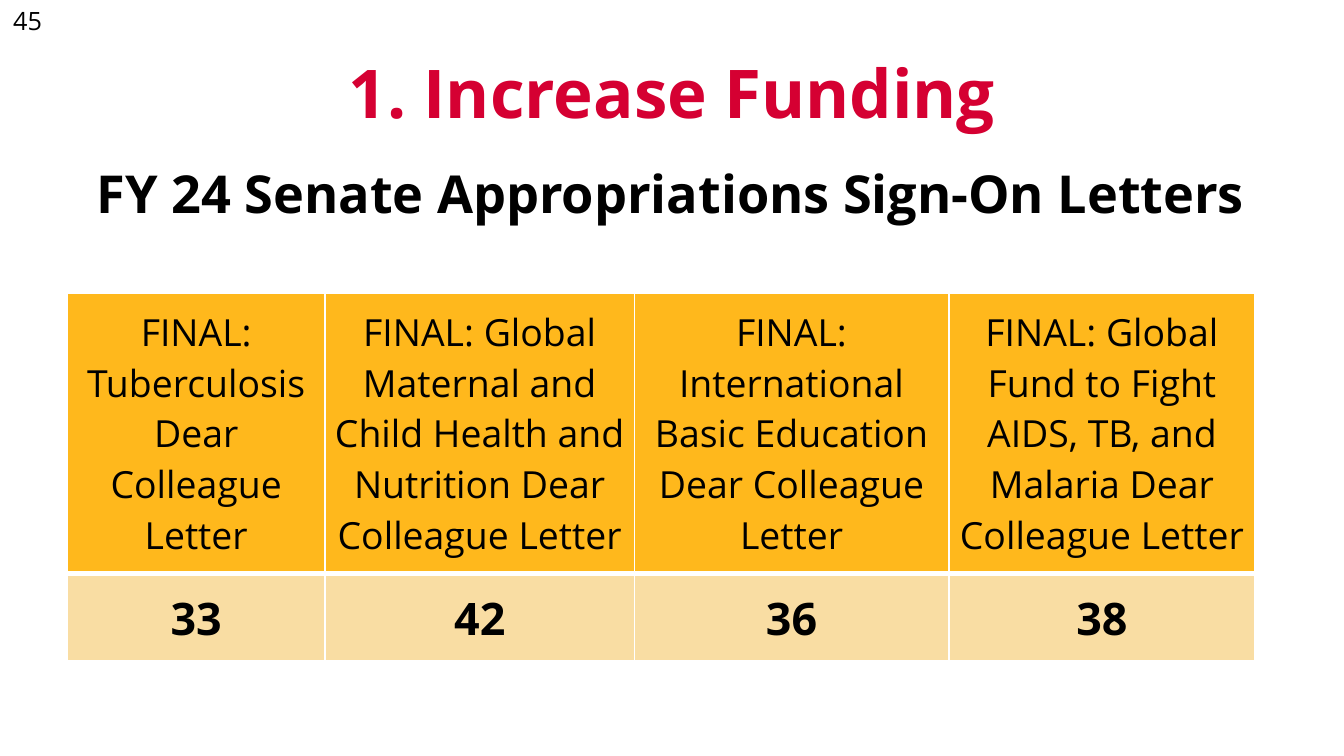
from lxml.etree import SubElement
from pptx import Presentation
from pptx.dml.color import RGBColor
from pptx.enum.text import MSO_ANCHOR, MSO_AUTO_SIZE, PP_ALIGN
from pptx.oxml import parse_xml
from pptx.oxml.ns import nsdecls, qn
from pptx.util import Inches, Pt

SLIDE_WIDTH = 10
SLIDE_HEIGHT = SLIDE_WIDTH * 9 / 16
FONT = "Open Sans"
COLORS = {
    "heading": "D50032",
    "ink": "000000",
    "header": "FFB81C",
    "count": "F9DDA3",
    "rule": "FFFFFF",
}
LETTERS = [
    ("FINAL: Tuberculosis Dear Colleague Letter", "33", 1.92),
    ("FINAL: Global Maternal and Child Health and Nutrition Dear Colleague Letter", "42", 2.3),
    ("FINAL: International Basic Education Dear Colleague Letter", "36", 2.34),
    ("FINAL: Global Fund to Fight AIDS, TB, and Malaria Dear Colleague Letter", "38", 2.28),
]


def color(name):
    return RGBColor.from_string(COLORS[name])


def place(shape, box):
    shape.left, shape.top, shape.width, shape.height = map(Inches, box)


def write(frame, text, size, ink="ink", bold=False, align=PP_ALIGN.LEFT):
    paragraph = frame.paragraphs[0]
    paragraph.text = text
    paragraph.alignment = align
    paragraph.font.name = FONT
    paragraph.font.size = Pt(size)
    paragraph.font.bold = bold
    paragraph.font.color.rgb = color(ink)
    return paragraph


def add_page_number(slide, box):
    number = slide.shapes.add_textbox(*map(Inches, box))
    number.text_frame.word_wrap = True
    write(number.text_frame, "45", 13.5)


def fill_title(slide, box):
    title = slide.shapes.title
    place(title, box)
    title.text_frame.auto_size = MSO_AUTO_SIZE.NONE
    title.text_frame.vertical_anchor = MSO_ANCHOR.MIDDLE
    write(title.text_frame, "1. Increase Funding", 36, "heading", True, PP_ALIGN.CENTER)


def fill_subtitle(slide, box):
    subtitle = slide.placeholders[1]
    place(subtitle, box)
    frame = subtitle.text_frame
    frame.auto_size = MSO_AUTO_SIZE.NONE
    properties = frame.paragraphs[0]._p.get_or_add_pPr()
    properties.set("marL", str(Inches(0.12)))
    properties.set("indent", "0")
    SubElement(properties, qn("a:buNone"))
    heading = write(frame, "FY 24 Senate Appropriations Sign-On Letters", 28, bold=True)
    heading.space_before = Pt(0)


def rule_cell(cell, top, bottom):
    properties = cell._tc.get_or_add_tcPr()
    widths = {"lnL": 1, "lnR": 1, "lnT": top, "lnB": bottom}
    for position, (side, width) in enumerate(widths.items()):
        properties.insert(position, parse_xml(
            f'<a:{side} {nsdecls("a")} w="{Pt(width)}"><a:solidFill>'
            f'<a:srgbClr val="{COLORS["rule"]}"/></a:solidFill></a:{side}>'
        ))


def fill_cell(cell, text, size, fill, bold, top, bottom):
    cell.margin_left = cell.margin_right = Inches(0.03)
    cell.margin_top = cell.margin_bottom = Inches(0.1)
    cell.vertical_anchor = MSO_ANCHOR.BOTTOM
    write(cell.text_frame, text, size, bold=bold, align=PP_ALIGN.CENTER)
    cell.fill.solid()
    cell.fill.fore_color.rgb = color(fill)
    rule_cell(cell, top, bottom)


def add_letters_table(slide, box):
    letters = slide.shapes.add_table(2, len(LETTERS), *map(Inches, box)).table
    header_height = 2.09
    letters.rows[0].height = Inches(header_height)
    letters.rows[1].height = Inches(box[3] - header_height)
    share = box[2] / sum(width for _, _, width in LETTERS)
    for column, (letter, signers, width) in enumerate(LETTERS):
        letters.columns[column].width = Inches(width * share)
        fill_cell(letters.cell(0, column), letter, 20, "header", False, 1, 3)
        fill_cell(letters.cell(1, column), signers, 24, "count", True, 3, 1)


def main():
    deck = Presentation()
    deck.slide_width = Inches(SLIDE_WIDTH)
    deck.slide_height = Inches(SLIDE_HEIGHT)
    slide = deck.slides.add_slide(deck.slide_layouts[1])
    margin = SLIDE_WIDTH * 0.05
    title_width = 6.54
    add_page_number(slide, (0, -0.01, margin, 0.3))
    fill_title(slide, ((SLIDE_WIDTH - title_width) / 2, 0.21, title_width, 0.94))
    fill_subtitle(slide, (margin, 1.15, SLIDE_WIDTH - 2 * margin, 0.77))
    add_letters_table(slide, (margin, 2.18, 8.84, 2.74))
    deck.save("out.pptx")


if __name__ == "__main__":
    main()
